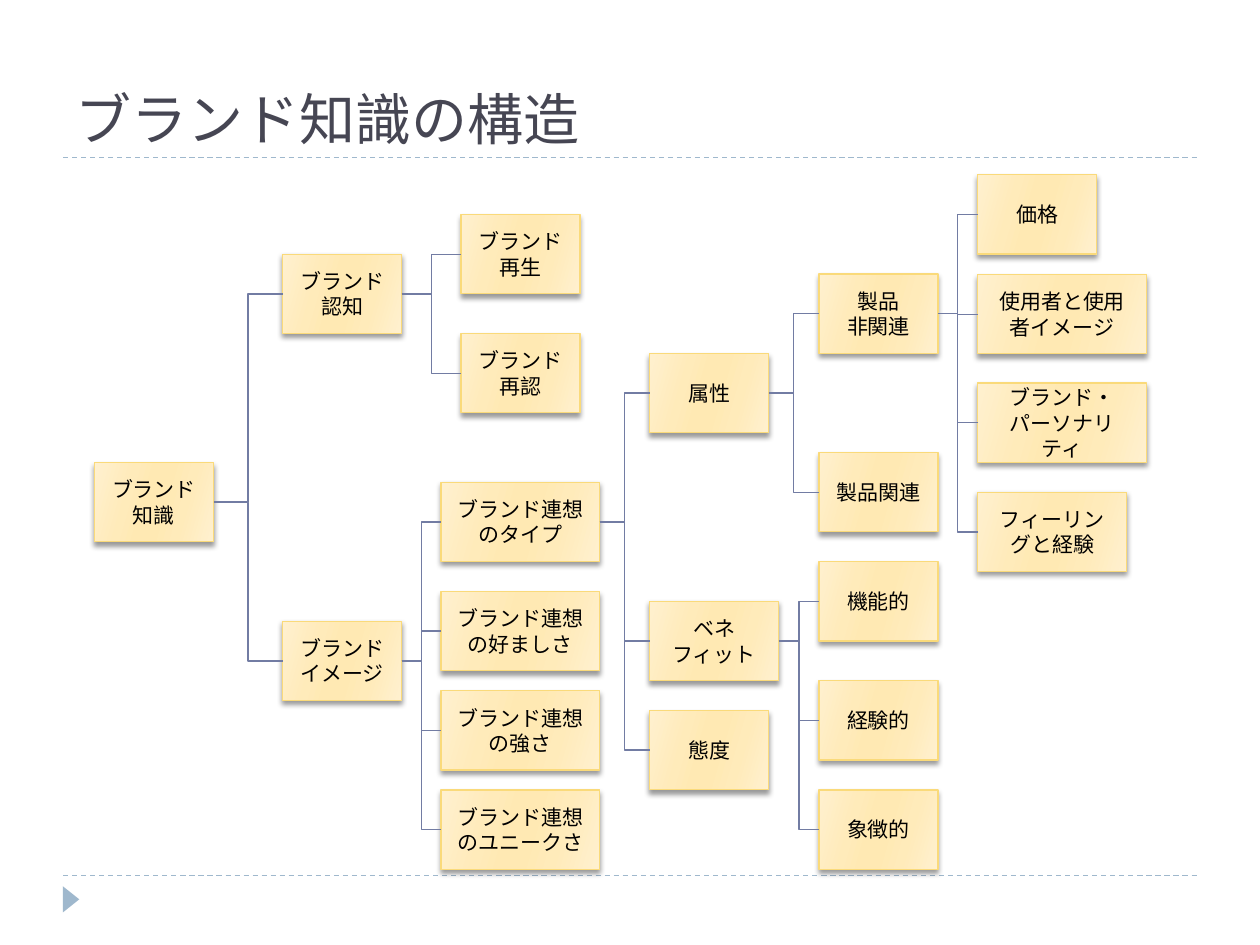
from pptx import Presentation
from pptx.dml.color import RGBColor
from pptx.enum.dml import MSO_LINE
from pptx.enum.shapes import MSO_CONNECTOR as CONNECTOR, MSO_SHAPE as SHAPE
from pptx.enum.text import MSO_ANCHOR as ANCHOR, PP_ALIGN as ALIGN
from pptx.oxml import parse_xml
from pptx.oxml.ns import nsdecls
from pptx.util import Pt

TITLE_INK = RGBColor(0x46, 0x46, 0x53)
BLACK = RGBColor(0x00, 0x00, 0x00)
RULE_BLUE = RGBColor(0x9F, 0xB8, 0xCD)
BRANCH_BLUE = RGBColor(0x72, 0x7C, 0xA3)
BOX_EDGE = RGBColor(0xFA, 0xDA, 0x7A)
BOX_PALE = RGBColor(0xFF, 0xF0, 0xCF)
BOX_MIDDLE = RGBColor(0xFF, 0xEB, 0xBA)
BOX_DEEP = RGBColor(0xFF, 0xE9, 0xB3)

GRADIENT_STOPS = [(0, BOX_PALE), (30, BOX_MIDDLE), (45, BOX_DEEP),
                  (55, BOX_DEEP), (73, BOX_MIDDLE), (100, BOX_PALE)]
STOPS_XML = "".join(
    f'<a:gs pos="{position * 1000}"><a:srgbClr val="{color}"/></a:gs>'
    for position, color in GRADIENT_STOPS)
GRADIENT_XML = (f'<a:gradFill {nsdecls("a")} rotWithShape="1"><a:gsLst>{STOPS_XML}</a:gsLst>'
                '<a:lin ang="960000" scaled="0"/></a:gradFill>')
SHADOW_XML = (f'<a:effectLst {nsdecls("a")}>'
              f'<a:outerShdw blurRad="{Pt(3)}" dist="{Pt(2)}" dir="5400000" rotWithShape="0">'
              '<a:srgbClr val="000000"><a:alpha val="40000"/></a:srgbClr>'
              '</a:outerShdw></a:effectLst>')

BOX_HEIGHT = 45.35
NARROW, BENEFIT, EXPERIENCE, WIDE, WIDEST = 68, 73.7, 85, 90.7, 96.4
ROOT, PILLAR, RECALL, ASSOCIATION, TYPE, DETAIL, LEAF = 54, 161.5, 263.4, 252, 371.3, 468, 558.7

BOXES = [
    ("知識", None, ROOT, 264.3, NARROW, "ブランド\n知識"),
    ("認知", "知識", PILLAR, 145.3, NARROW, "ブランド\n認知"),
    ("イメージ", "知識", PILLAR, 355, NARROW, "ブランド\nイメージ"),
    ("再生", "認知", RECALL, 122.6, NARROW, "ブランド\n再生"),
    ("再認", "認知", RECALL, 190.6, NARROW, "ブランド\n再認"),
    ("タイプ", "イメージ", ASSOCIATION, 275.6, WIDE, "ブランド連想のタイプ"),
    ("好ましさ", "イメージ", ASSOCIATION, 338, WIDE, "ブランド連想の好ましさ"),
    ("強さ", "イメージ", ASSOCIATION, 394.7, WIDE, "ブランド連想の強さ"),
    ("ユニークさ", "イメージ", ASSOCIATION, 451.4, WIDE, "ブランド連想のユニークさ"),
    ("属性", "タイプ", TYPE, 202, NARROW, "属性"),
    ("ベネフィット", "タイプ", TYPE, 343.7, BENEFIT, "ベネフィット"),
    ("態度", "タイプ", TYPE, 406, NARROW, "態度"),
    ("非関連", "属性", DETAIL, 156.6, NARROW, "製品\n非関連"),
    ("関連", "属性", DETAIL, 258.6, NARROW, "製品関連"),
    ("機能的", "ベネフィット", DETAIL, 321, NARROW, "機能的"),
    ("経験的", "ベネフィット", DETAIL, 389, NARROW, "経験的"),
    ("象徴的", "ベネフィット", DETAIL, 451.4, NARROW, "象徴的"),
    ("価格", "非関連", LEAF, 99.9, NARROW, "価格"),
    ("使用者", "非関連", LEAF, 156.9, WIDEST, "使用者と使用者イメージ"),
    ("パーソナリティ", "非関連", LEAF, 218.9, WIDEST, "ブランド・\nパーソナリティ"),
    ("フィーリング", "非関連", LEAF, 281.3, EXPERIENCE, "フィーリングと経験"),
]


def write_text(shape, text, *, size, font, color, align, anchor):
    frame = shape.text_frame
    frame.word_wrap = True
    frame.vertical_anchor = anchor
    frame.text = text
    for paragraph in frame.paragraphs:
        paragraph.alignment = align
        paragraph.font.size = Pt(size)
        paragraph.font.name = font
        paragraph.font.color.rgb = color


def add_line(kind, left, top, right, bottom, color):
    line = slide.shapes.add_connector(kind, Pt(left), Pt(top), Pt(right), Pt(bottom))
    line.line.color.rgb = color
    line.line.width = Pt(0.75)
    line._element.spPr.append(parse_xml(f'<a:effectLst {nsdecls("a")}/>'))
    return line


presentation = Presentation()
presentation.slide_width = Pt(720)
presentation.slide_height = Pt(540)
slide = presentation.slides.add_slide(presentation.slide_layouts[6])

for rule_top in (500.4, 90):
    rule = add_line(CONNECTOR.STRAIGHT, 36, rule_top, 684, rule_top, RULE_BLUE)
    rule.line.dash_style = MSO_LINE.DASH

marker = slide.shapes.add_shape(SHAPE.ISOSCELES_TRIANGLE, Pt(33.1), Pt(509.2), Pt(15), Pt(9.4))
marker.rotation = 90
marker.shadow.inherit = False
marker.fill.solid()
marker.fill.fore_color.rgb = RULE_BLUE
marker.line.fill.background()

title = slide.shapes.add_textbox(Pt(36), Pt(12), Pt(648), Pt(78))
write_text(title, "ブランド知識の構造", size=32, font="Roboto Slab", color=TITLE_INK,
           align=ALIGN.LEFT, anchor=ANCHOR.BOTTOM)

boxes = {}
for name, parent, left, top, width, text in BOXES:
    box = slide.shapes.add_shape(SHAPE.RECTANGLE, Pt(left), Pt(top), Pt(width), Pt(BOX_HEIGHT))
    box._element.spPr.append(parse_xml(GRADIENT_XML))
    box.line.color.rgb = BOX_EDGE
    box.line.width = Pt(0.75)
    box._element.spPr.append(parse_xml(SHADOW_XML))
    write_text(box, text, size=12, font="Calibri", color=BLACK,
               align=ALIGN.CENTER, anchor=ANCHOR.MIDDLE)
    boxes[name] = box

for name, parent, *_ in BOXES:
    if parent:
        branch = add_line(CONNECTOR.ELBOW, 0, 0, 0, 0, BRANCH_BLUE)
        branch.begin_connect(boxes[parent], 3)
        branch.end_connect(boxes[name], 1)

presentation.save("out.pptx")
